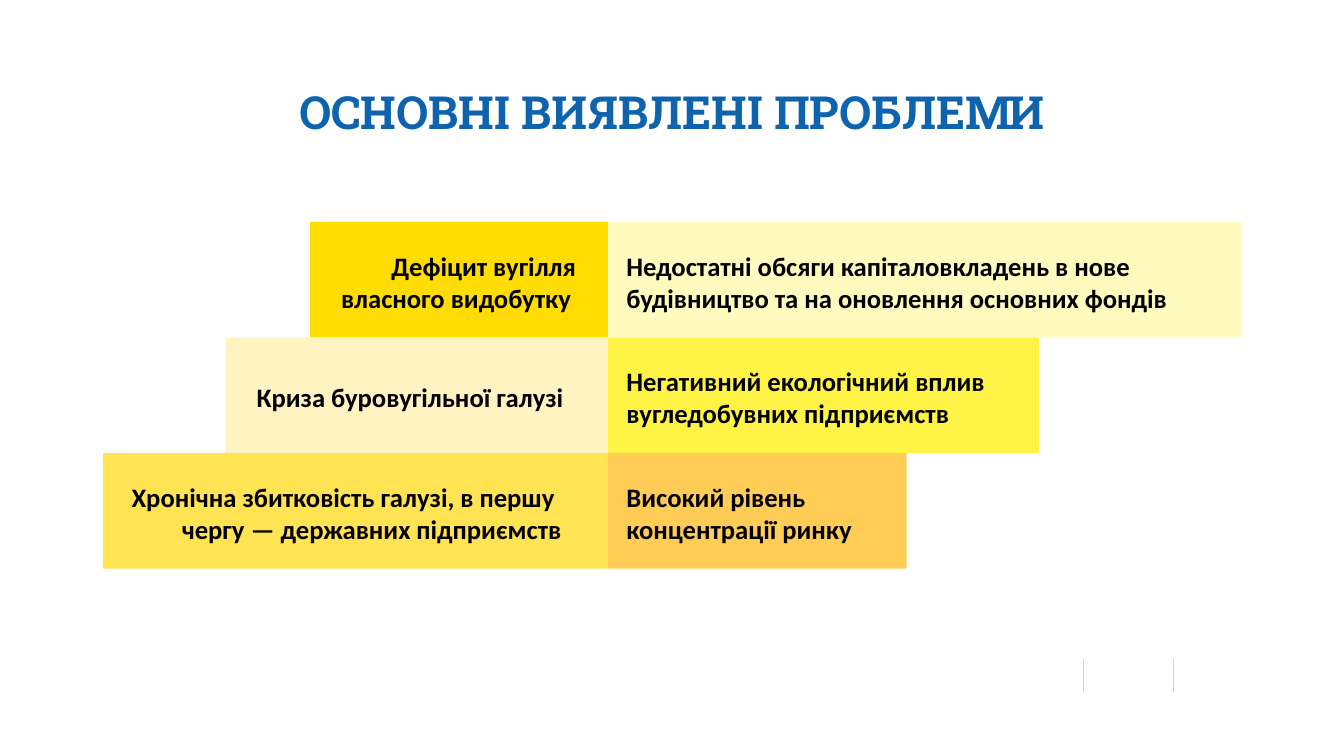
from pptx import Presentation
from pptx.dml.color import RGBColor
from pptx.enum.shapes import MSO_CONNECTOR as Link, MSO_SHAPE as Kind
from pptx.enum.text import MSO_ANCHOR as Anchor, MSO_AUTO_SIZE as Fit, PP_ALIGN as Align
from pptx.oxml.ns import qn
from pptx.util import Pt
from lxml.etree import SubElement

MID, TOP, HIGH = 479.6, 175, 91.2
PAD = 14.4

# Width, fill, text, left margin, first-line indent
LEFT = [
    (235, "FFDD00", "Дефіцит вугілля\vвласного видобутку", 24.5, 39.6),
    (301.7, "FFF3C2", "Криза буровугільної галузі", 24.5, 0),
    (398.2, "FFE352", "Хронічна збитковість галузі, в першу\vчергу — державних підприємств", 62, -39.6),
]
# Width, fill, text
RIGHT = [
    (499, "FFFABE", "Недостатні обсяги капіталовкладень в нове\vбудівництво та на оновлення основних фондів"),
    (339.8, "FFF346", "Негативний екологічний вплив\vвугледобувних підприємств"),
    (235.4, "FFCD56", "Високий рівень\vконцентрації ринку"),
]


def color(code):
    return RGBColor.from_string(code)


class Deck:
    def __init__(self, wide, high):
        self.prs = Presentation()
        self.prs.slide_width, self.prs.slide_height = Pt(wide), Pt(high)
        self.slide = self.prs.slides.add_slide(self.prs.slide_layouts[5])

    def label(self, shape, text, font, size, ink, anchor, top):
        """Fill a shape with one bold left-aligned paragraph and return it."""
        frame = shape.text_frame
        frame.auto_size, frame.word_wrap = Fit.NONE, True
        frame.vertical_anchor = anchor
        frame.margin_left = frame.margin_right = frame.margin_bottom = 0
        frame.margin_top = Pt(top)
        frame.text = text
        para = frame.paragraphs[0]
        para.alignment = Align.LEFT
        para.font.name, para.font.size, para.font.bold = font, Pt(size), True
        para.font.color.rgb = color(ink)
        return para

    def title(self, text, x, y, w, h):
        shape = self.slide.shapes.title
        shape.left, shape.top, shape.width, shape.height = map(Pt, (x, y, w, h))
        self.label(shape, text, "Roboto Slab", 36, "0E63AF", Anchor.TOP, 1)

    def bar(self, x, y, w, h, fill, text, margin, indent=0):
        shape = self.slide.shapes.add_shape(Kind.RECTANGLE, Pt(x), Pt(y), Pt(w), Pt(h))
        shape.shadow.inherit = False
        shape.fill.solid()
        shape.fill.fore_color.rgb = color(fill)
        shape.line.fill.background()
        para = self.label(shape, text, "Calibri", 21, "000000", Anchor.MIDDLE, 3)
        props = para._p.get_or_add_pPr()
        props.set("marL", str(Pt(margin)))
        props.set("indent", str(Pt(indent)))

    def rule(self, x, y, h):
        line = self.slide.shapes.add_connector(Link.STRAIGHT, Pt(x), Pt(y), Pt(x), Pt(y + h))
        line.line.color.rgb = color("D6D5D5")
        line.line.width = Pt(0.46)
        SubElement(line._element.spPr, qn("a:effectLst"))


def main():
    deck = Deck(1059.84, 595.44)
    for x in (854.6, 925.2):
        deck.rule(x, 519.8, 26)
    deck.title("ОСНОВНІ ВИЯВЛЕНІ ПРОБЛЕМИ", 235.8, 65.5, 589.7, 45.4)
    for row, (left, right) in enumerate(zip(LEFT, RIGHT)):
        y = TOP + row * HIGH
        deck.bar(MID - left[0], y, left[0], HIGH, *left[1:])
        deck.bar(MID, y, right[0], HIGH, *right[1:], PAD)
    deck.prs.save("out.pptx")


if __name__ == "__main__":
    main()
